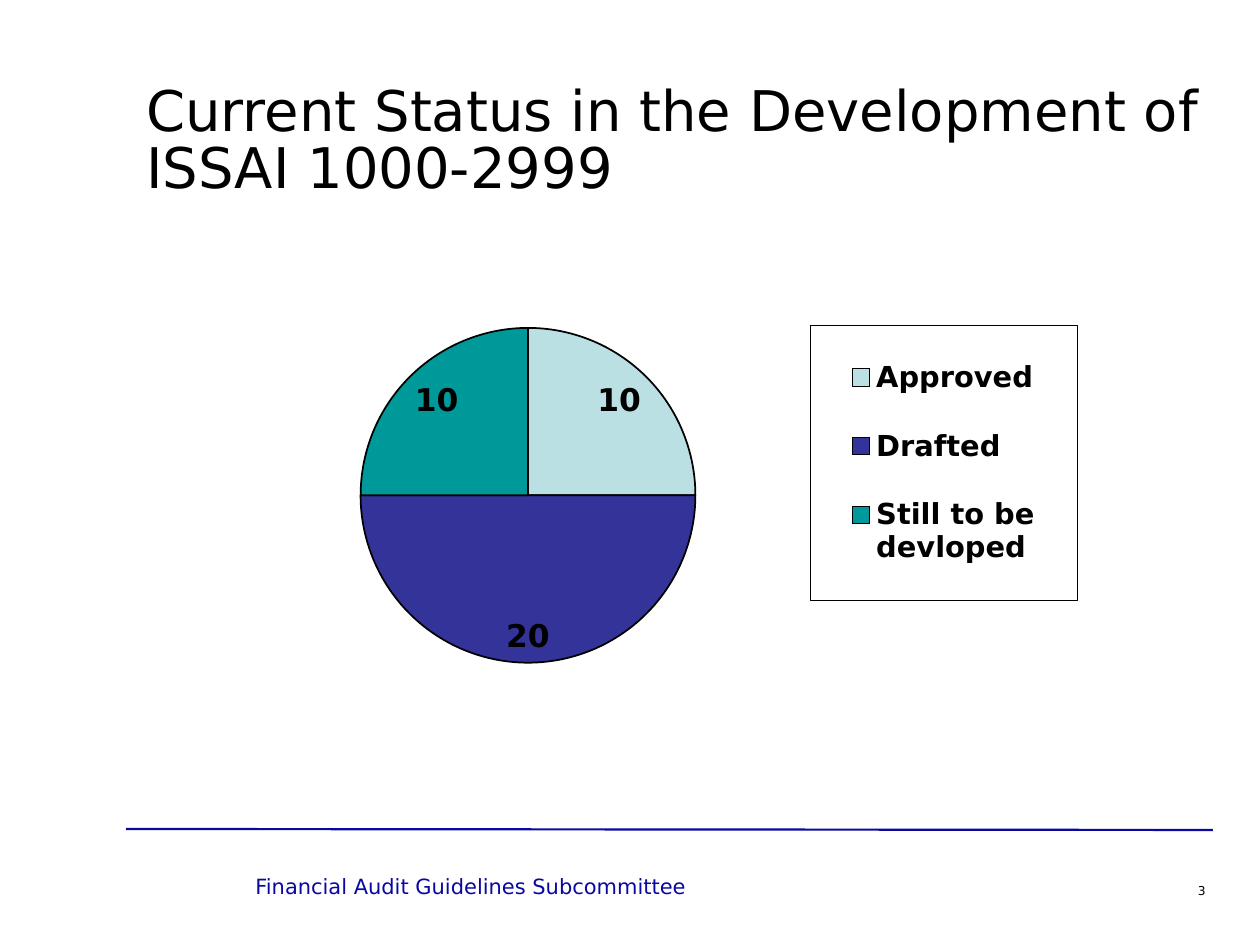
from lxml import etree
from pptx import Presentation
from pptx.chart.data import CategoryChartData
from pptx.dml.color import RGBColor
from pptx.enum.chart import XL_CHART_TYPE, XL_LABEL_POSITION, XL_LEGEND_POSITION
from pptx.enum.shapes import MSO_CONNECTOR
from pptx.enum.text import MSO_ANCHOR, PP_ALIGN
from pptx.oxml import parse_xml
from pptx.oxml.ns import nsdecls, qn
from pptx.util import Pt

PIE = XL_CHART_TYPE.PIE
INSIDE = XL_LABEL_POSITION.INSIDE_END
RIGHT = XL_LEGEND_POSITION.RIGHT
STRAIGHT = MSO_CONNECTOR.STRAIGHT
TOP, MIDDLE = MSO_ANCHOR.TOP, MSO_ANCHOR.MIDDLE
ALIGN_LEFT, ALIGN_RIGHT = PP_ALIGN.LEFT, PP_ALIGN.RIGHT

BLACK = RGBColor(0x00, 0x00, 0x00)
WHITE = RGBColor(0xFF, 0xFF, 0xFF)
BLUE = RGBColor(0x0A, 0x08, 0xA1)
PALE = RGBColor(0xBB, 0xE0, 0xE3)
INDIGO = RGBColor(0x33, 0x33, 0x99)
TEAL = RGBColor(0x00, 0x99, 0x99)
FONT = "DejaVu Sans"

TITLE = "Current Status in the Development of ISSAI 1000-2999"
FOOTER = "Financial Audit Guidelines Subcommittee"
NUMBER = "3"
STATUS = ["Approved", "Drafted", "Still to be devloped"]
NONE = [None] * len(STATUS)
SERIES = [
    ("Series 1", [10, 20, 10], [PALE, INDIGO, TEAL]),
    ("Series 2", NONE, [PALE, INDIGO, TEAL]),
    ("Series 3", NONE, [PALE, INDIGO, WHITE]),
]

# Boxes in px: left, top, width, height
CHART = (246, 217, 837, 558)
PLOT = (361, 327, 335, 337)
LEGEND = (810, 325, 267, 275)


def px(n):
    return round(n * 914400 / 126)


def style(font, size, color=BLACK, bold=False):
    font.name, font.size, font.bold = FONT, Pt(size), bold
    font.color.rgb = color


def add_text(slide, text, box, size, color=BLACK, align=ALIGN_LEFT,
             anchor=TOP, spacing=None):
    frame = slide.shapes.add_textbox(*map(px, box)).text_frame
    frame.word_wrap = True
    frame.vertical_anchor = anchor
    para = frame.paragraphs[0]
    para.alignment = align
    para.line_spacing = spacing
    run = para.add_run()
    run.text = text
    style(run.font, size, color)


def add_rule(slide, start, end):
    line = slide.shapes.add_connector(STRAIGHT, *map(px, start + end))
    line.line.color.rgb = BLUE
    line.line.width = Pt(1.25)
    etree.SubElement(line._element.spPr, qn("a:effectLst"))


def layout(box, target=""):
    """Manual chart layout that places a px box as shares of the chart."""
    left, top, wide, high = CHART
    x, y, w, h = box
    inner = f'<c:layoutTarget val="{target}"/>' if target else ""
    shares = {"x": (x - left) / wide, "y": (y - top) / high,
              "w": w / wide, "h": h / high}
    modes = '<c:xMode val="edge"/><c:yMode val="edge"/>'
    parts = "".join(f'<c:{k} val="{v:.3f}"/>' for k, v in shares.items())
    return parse_xml(f'<c:layout {nsdecls("c")}><c:manualLayout>'
                     f'{inner}{modes}{parts}</c:manualLayout></c:layout>')


def drop_layout(node):
    for old in node.findall(qn("c:layout")):
        node.remove(old)


def add_legend(chart):
    chart.has_legend = True
    legend = chart.legend
    legend.position = RIGHT
    legend.include_in_layout = False
    style(legend.font, 16.5, bold=True)
    node = legend._element
    drop_layout(node)
    node.find(qn("c:legendPos")).addnext(layout(LEGEND))
    node.find(qn("c:overlay")).addnext(parse_xml(
        f'<c:spPr {nsdecls("c", "a")}><a:noFill/><a:ln w="3175"><a:solidFill>'
        f'<a:srgbClr val="{BLACK}"/></a:solidFill></a:ln></c:spPr>'))


def paint(series, colors):
    for i, color in enumerate(colors):
        form = series.points[i].format
        form.fill.solid()
        form.fill.fore_color.rgb = color
        form.line.color.rgb = BLACK
        form.line.width = Pt(1)
    labels = series.data_labels
    labels.show_value = True
    labels.position = INSIDE
    style(labels.font, 17.9, bold=True)


def add_pie(slide):
    data = CategoryChartData()
    data.categories = STATUS
    for name, values, _ in SERIES:
        data.add_series(name, values)
    chart = slide.shapes.add_chart(PIE, *map(px, CHART), data).chart
    # A new pie holds the first series only; this brings in the rest.
    chart.replace_data(data)
    chart.has_title = False
    style(chart.font, 17.9, bold=True)

    plot = chart.plots[0]
    plot.vary_by_categories = True
    for series, (_, _, colors) in zip(plot.series, SERIES):
        paint(series, colors)

    area = chart._chartSpace.chart.plotArea
    drop_layout(area)
    area.insert(0, layout(PLOT, "inner"))
    add_legend(chart)


def main():
    deck = Presentation()
    deck.slide_width, deck.slide_height = px(1260), px(945)
    slide = deck.slides.add_slide(deck.slide_layouts[6])
    add_rule(slide, (126, 829), (1213, 830))
    add_text(slide, FOOTER, (243, 867, 745, 38), 12, color=BLUE)
    add_text(slide, TITLE, (134, 75, 1081, 135), 32, anchor=MIDDLE,
             spacing=0.85)
    add_text(slide, NUMBER, (1078, 877, 140, 38), 7, align=ALIGN_RIGHT)
    add_pie(slide)
    deck.save("out.pptx")


if __name__ == "__main__":
    main()
